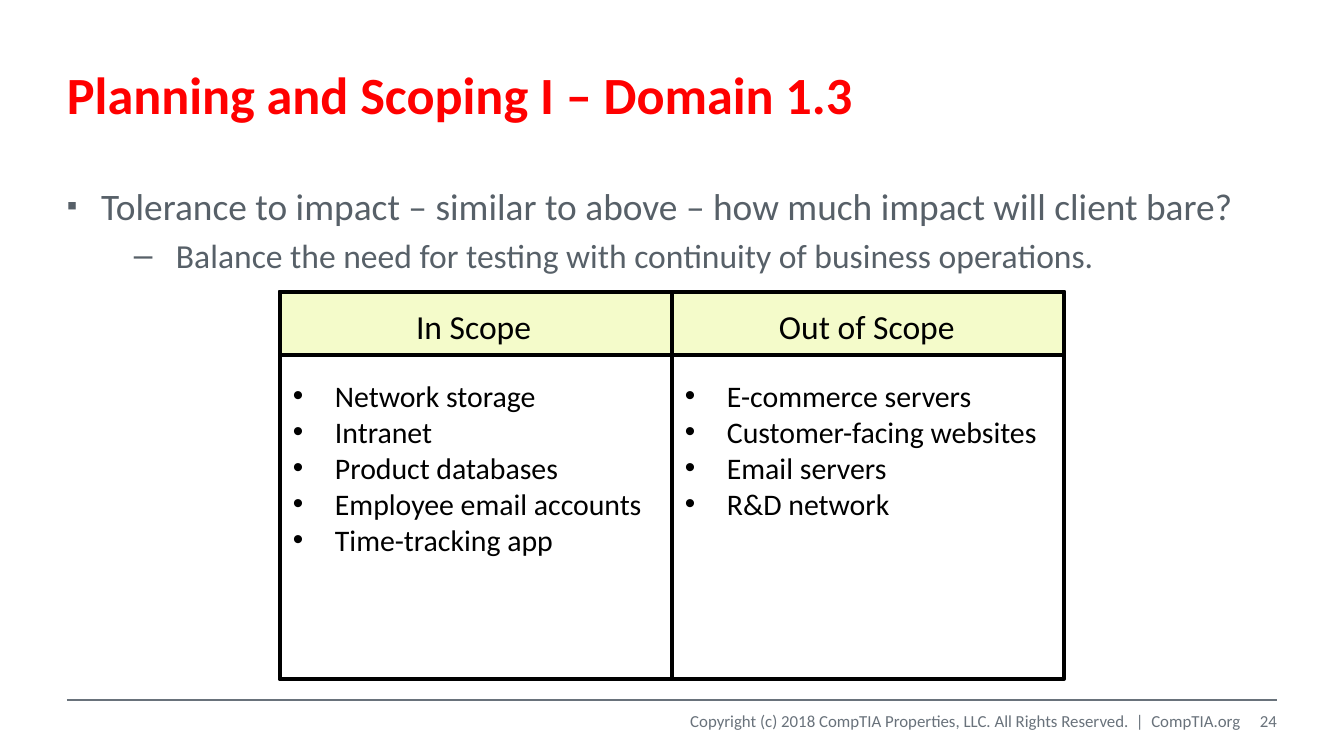
from lxml import etree
from pptx import Presentation
from pptx.dml.color import RGBColor
from pptx.enum.shapes import MSO_CONNECTOR, MSO_SHAPE
from pptx.enum.text import MSO_ANCHOR, MSO_AUTO_SIZE, PP_ALIGN
from pptx.oxml.ns import qn
from pptx.util import Emu, Pt

LEFT, RIGHT = PP_ALIGN.LEFT, PP_ALIGN.RIGHT
TOP, MIDDLE = MSO_ANCHOR.TOP, MSO_ANCHOR.MIDDLE

# Content
TITLE = "Planning and Scoping I – Domain 1.3"
BODY = [
    "Tolerance to impact – similar to above – how much impact will client bare?",
    "Balance the need for testing with continuity of business operations.",
]
SCOPE = [
    ("In Scope", ["Network storage", "Intranet", "Product databases",
                  "Employee email accounts", "Time-tracking app"]),
    ("Out of Scope", ["E-commerce servers", "Customer-facing websites",
                      "Email servers", "R&D network"]),
]
COPYRIGHT = ("Copyright (c) 2018 CompTIA Properties, LLC. "
             "All Rights Reserved.  |  CompTIA.org")
PAGE = "24"

# Formats
COLORS = {"title": "FF0000", "body": "576068", "footer": "69727B",
          "ink": "000000", "header": "F4FBCA"}
FONTS = {
    "title": {"size": Pt(28), "bold": True},
    "body": {"size": Pt(20)},
    "sub": {"size": Pt(18)},
    "header": {"size": Pt(18)},
    "item": {"size": Pt(16)},
    "footer": {"size": Pt(9)},
}
BULLETS = [  # format, level, indent, hang, character, size %, space before
    ("body", 0, 34, 34, "▪", 80, 0),
    ("sub", 1, 109, 42, "–", 100, 3.6),
]

# Layout in px
SCALE = 914400 / 134.4
WIDTH, HEIGHT = 1344, 756
MARGIN, CONTENT_W = 67, 1210
PAD_X, PAD_Y = 13, 7
GRID_X, GRID_Y, COL_W, GRID_H, HEAD_H = 280, 292, 392, 387, 63
HEAD_TEXT_X = (403, 766)
FOOT_Y, FOOT_H, PAGE_X = 700, 41, 1240


def px(*values):
    return [Emu(round(v * SCALE)) for v in values]


def rgb(name):
    return RGBColor.from_string(COLORS[name])


def frame(sp, left=PAD_X, right=PAD_X, anchor=TOP):
    tf = sp.text_frame
    tf.margin_left, tf.margin_right, tf.margin_top, tf.margin_bottom = px(
        left, right, PAD_Y, PAD_Y)
    tf.word_wrap = True
    tf.auto_size = MSO_AUTO_SIZE.NONE
    tf.vertical_anchor = anchor
    return tf


def write(p, text, fmt, color, align=LEFT, before=0):
    p.alignment = align
    p.space_before = Pt(before)
    r = p.add_run()
    r.text = text
    r.font.name = "Calibri"
    r.font.color.rgb = rgb(color)
    for name, value in FONTS[fmt].items():
        setattr(r.font, name, value)


def bullet(p, indent, hang, char, percent=100):
    pPr = p._p.get_or_add_pPr()
    margin, first = px(indent, -hang)
    pPr.set("marL", str(margin))
    pPr.set("indent", str(first))
    etree.SubElement(pPr, qn("a:buSzPct"), val=str(percent * 1000))
    etree.SubElement(pPr, qn("a:buFont"), typeface="Arial")
    etree.SubElement(pPr, qn("a:buChar"), char=char)


def paragraphs(tf, texts):
    for i, text in enumerate(texts):
        yield (tf.add_paragraph() if i else tf.paragraphs[0]), text


def place(sp, *box):
    sp.left, sp.top, sp.width, sp.height = px(*box)


def add_box(shapes, x, y, w, h, fill=None):
    sp = shapes.add_shape(MSO_SHAPE.RECTANGLE, *px(x, y, w, h))
    sp.shadow.inherit = False
    if fill:
        sp.fill.solid()
        sp.fill.fore_color.rgb = rgb(fill)
    else:
        sp.fill.background()
    sp.line.color.rgb = rgb("ink")
    sp.line.width = Pt(2.25)


prs = Presentation()
prs.slide_width, prs.slide_height = px(WIDTH, HEIGHT)
slide = prs.slides.add_slide(prs.slide_layouts[1])
shapes = slide.shapes

# Footer
rule = shapes.add_connector(
    MSO_CONNECTOR.STRAIGHT, *px(MARGIN, FOOT_Y, MARGIN + CONTENT_W, FOOT_Y))
rule.line.color.rgb = rgb("footer")
rule.line.width = Pt(1)
etree.SubElement(rule._element.spPr, qn("a:effectLst"))
for text, x, w, pad in [(COPYRIGHT, 505, PAGE_X - 505, 0),
                        (PAGE, PAGE_X, MARGIN + CONTENT_W - PAGE_X, PAD_X)]:
    sp = shapes.add_textbox(*px(x, FOOT_Y, w, FOOT_H))
    tf = frame(sp, left=pad, right=0, anchor=MIDDLE)
    write(tf.paragraphs[0], text, "footer", "footer", RIGHT)

# Title and body
place(shapes.title, MARGIN, 31, CONTENT_W, 126)
tf = frame(shapes.title, left=0, anchor=MIDDLE)
write(tf.paragraphs[0], TITLE, "title", "title")

body = slide.placeholders[1]
place(body, MARGIN, 176, CONTENT_W, 499)
lines = paragraphs(frame(body, left=0), BODY)
for (p, text), (fmt, level, indent, hang, char, percent, before) in zip(
        lines, BULLETS):
    p.level = level
    bullet(p, indent, hang, char, percent)
    write(p, text, fmt, "body", before=before)

# Scope grid
grid = shapes.add_group_shape().shapes
add_box(grid, GRID_X, GRID_Y, 2 * COL_W, GRID_H)
add_box(grid, GRID_X, GRID_Y, 2 * COL_W, HEAD_H, "header")
add_box(grid, GRID_X, GRID_Y, COL_W, GRID_H)

# Scope headings and lists
for i, (heading, items) in enumerate(SCOPE):
    sp = shapes.add_textbox(*px(HEAD_TEXT_X[i], GRID_Y + 7, 212, 54))
    write(frame(sp).paragraphs[0], heading, "header", "ink")
    sp = shapes.add_textbox(
        *px(GRID_X + i * COL_W, GRID_Y + HEAD_H + 16, COL_W, 276))
    for p, text in paragraphs(frame(sp), items):
        bullet(p, 42, 42, "•")
        write(p, text, "item", "ink")

prs.save("out.pptx")
